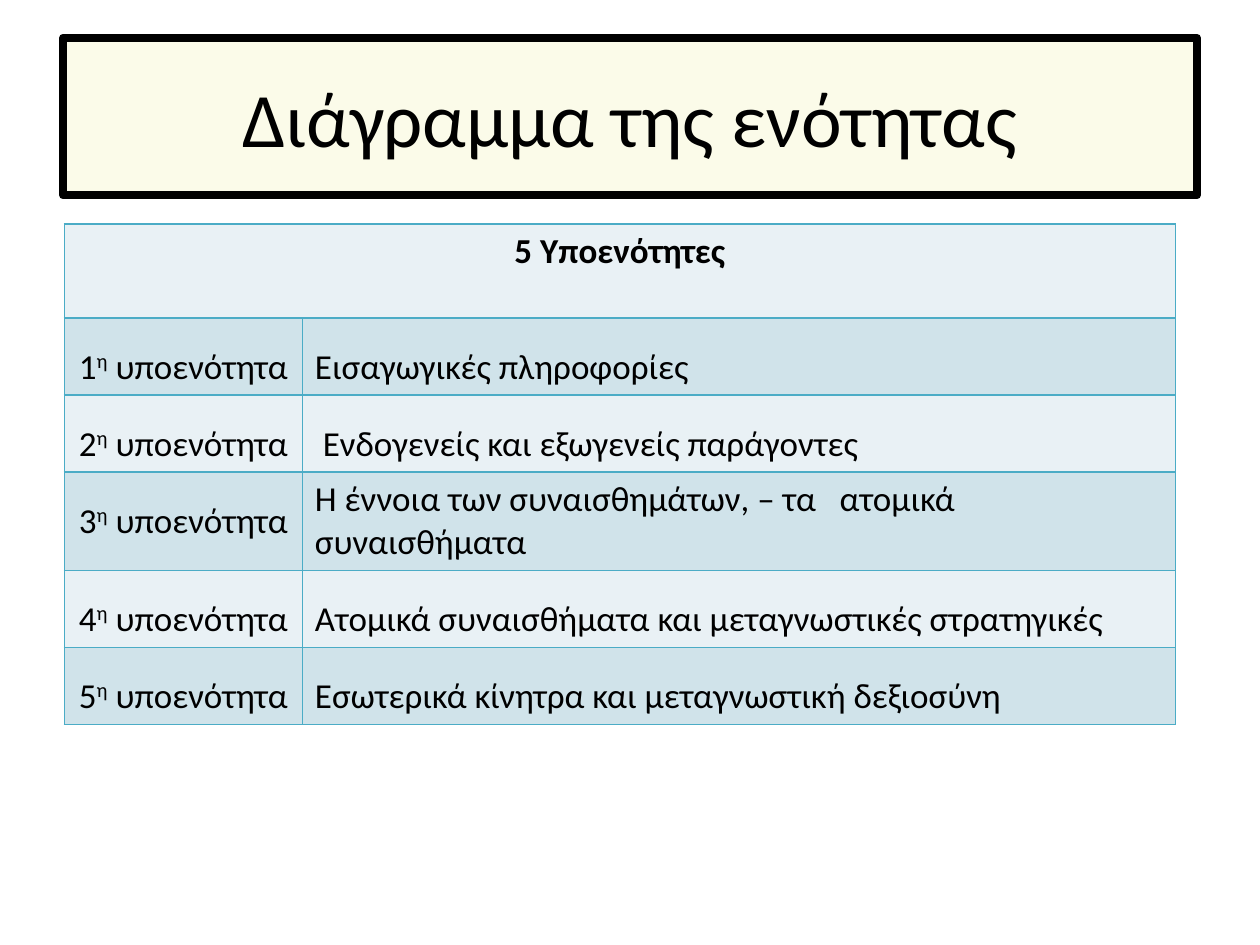
from lxml import etree
from pptx import Presentation
from pptx import util as u
from pptx.dml.color import RGBColor
from pptx.enum import shapes, text
from pptx.oxml.ns import qn


def color(code):
    return RGBColor.from_string(code)


class Deck:
    font = "Calibri"
    ink = "000000"
    cream = "FBFBE9"
    edge = "4BACC6"
    bands = ("E9F1F5", "D0E3EA")

    def __init__(self, wide, high):
        self.file = Presentation()
        self.file.slide_width = u.Pt(wide)
        self.file.slide_height = u.Pt(high)
        self.slide = self.file.slides.add_slide(self.file.slide_layouts[6])

    def label(self, frame, parts, size, align, bold=False, space=None):
        para = frame.paragraphs[0]
        para.alignment = align
        para.line_spacing = space
        para.font.name = self.font
        para.font.size = u.Pt(size)
        para.font.bold = bold
        para.font.color.rgb = color(self.ink)
        for part, lift in parts:
            run = para.add_run()
            run.text = part
            if lift:
                run.font._element.set("baseline", str(lift * 1000))

    def title(self, words, left, top, wide, high):
        box = self.slide.shapes.add_shape(
            shapes.MSO_SHAPE.RECTANGLE, *map(u.Pt, (left, top, wide, high)))
        box.shadow.inherit = False
        box.fill.solid()
        box.fill.fore_color.rgb = color(self.cream)
        box.line.color.rgb = color(self.ink)
        box.line.width = u.Pt(4.5)
        box.text_frame.word_wrap = True
        box.text_frame.vertical_anchor = text.MSO_ANCHOR.MIDDLE
        self.label(box.text_frame, [(words, 0)], 44, text.PP_ALIGN.CENTER)

    def border(self, cell):
        props = cell._tc.get_or_add_tcPr()
        for spot, side in enumerate(("a:lnL", "a:lnR", "a:lnT", "a:lnB")):
            line = etree.Element(qn(side), w=str(u.Pt(1)))
            fill = etree.SubElement(line, qn("a:solidFill"))
            etree.SubElement(fill, qn("a:srgbClr"), val=self.edge)
            props.insert(spot, line)

    def table(self, head, topics, left, top, cols, rows):
        grid = self.slide.shapes.add_table(
            len(rows), len(cols),
            *map(u.Pt, (left, top, sum(cols), sum(rows)))).table
        for col, wide in zip(grid.columns, cols):
            col.width = u.Pt(wide)
        for at, (row, high) in enumerate(zip(grid.rows, rows)):
            row.height = u.Pt(high)
            for cell in row.cells:
                cell.fill.solid()
                cell.fill.fore_color.rgb = color(self.bands[at % 2])
                self.border(cell)
        first = grid.cell(0, 0)
        first.merge(grid.cell(0, len(cols) - 1))
        self.label(first.text_frame, [(head, 0)], 20,
                   text.PP_ALIGN.CENTER, bold=True)
        for at, (topic, align, space) in enumerate(topics, 1):
            parts = [(str(at), 0), ("η", 30), (" υποενότητα", 0)]
            self.label(grid.cell(at, 0).text_frame, parts, 20,
                       text.PP_ALIGN.CENTER, space=1.5)
            self.label(grid.cell(at, 1).text_frame, [(topic, 0)], 20,
                       align, space=space)


def main():
    left, both = text.PP_ALIGN.LEFT, text.PP_ALIGN.JUSTIFY
    topics = [
        ("Εισαγωγικές πληροφορίες", both, 1.5),
        (" Ενδογενείς και εξωγενείς παράγοντες", both, 1.5),
        ("Η έννοια των συναισθημάτων, – τα   ατομικά συναισθήματα", left, None),
        ("Ατομικά συναισθήματα και μεταγνωστικές στρατηγικές", left, 1.5),
        ("Εσωτερικά κίνητρα και μεταγνωστική δεξιοσύνη", left, 1.5),
    ]
    deck = Deck(720, 540)
    deck.title("Διάγραμμα της ενότητας", 36, 21.6, 648, 90)
    deck.table("5 Υποενότητες", topics, 36.8, 128, (136, 499),
               (53.7, 44, 44, 56, 44, 44))
    deck.file.save("out.pptx")


if __name__ == "__main__":
    main()
